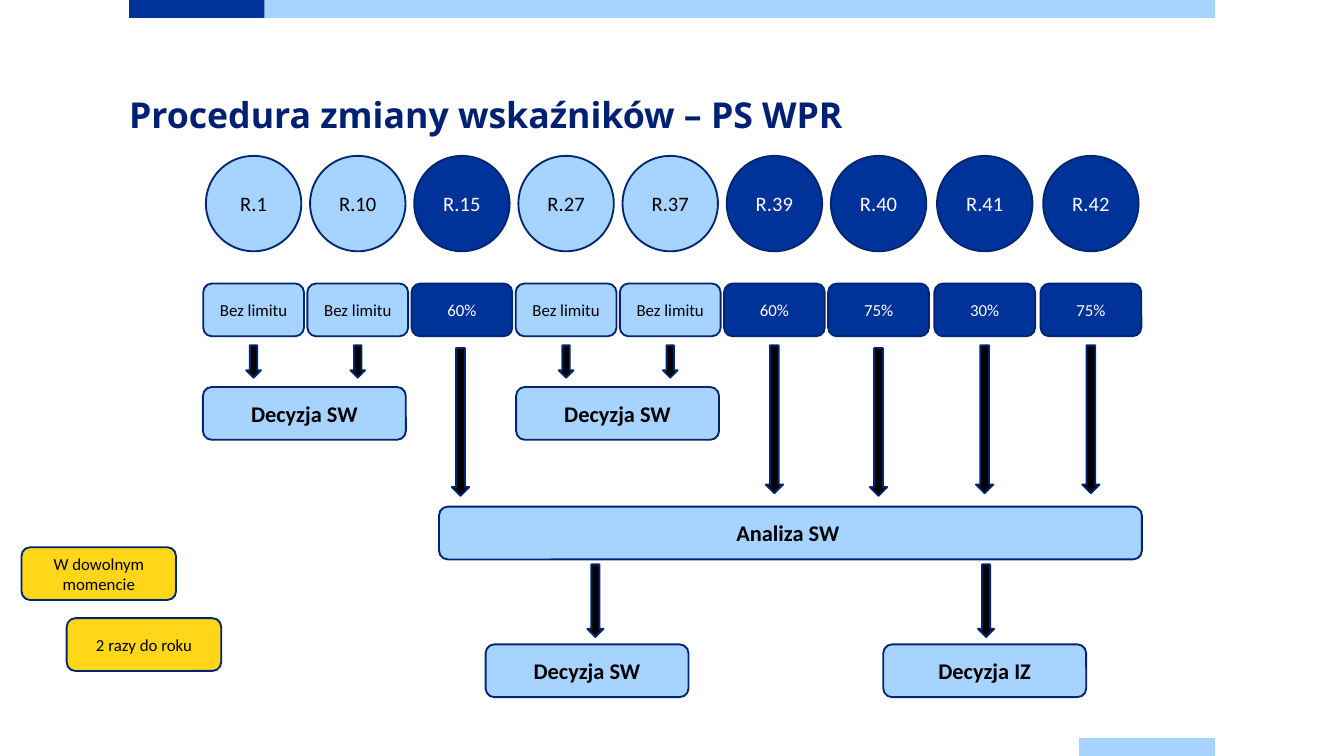
from pptx import Presentation
from pptx import util as u
from pptx.dml import color
from pptx.enum import shapes, text

LIGHT, DARK, YELLOW = "A6D3FF", "003399", "FFD618"
BLACK, WHITE, OUTLINE = "000000", "FFFFFF", "002671"
KIND = shapes.MSO_SHAPE

deck = Presentation()
deck.slide_width = u.Inches(10)
deck.slide_height = deck.slide_width * 9 // 16
page = deck.slides.add_slide(deck.slide_layouts[6])
COL = deck.slide_width / 100
ROW = deck.slide_height / 56.25


def rgb(value):
    return color.RGBColor.from_string(value)


def add_box(kind, left, top, width, height, fill, words="", size=9, bold=False, line=OUTLINE):
    box = page.shapes.add_shape(
        kind, round(left * COL), round(top * ROW), round(width * COL), round(height * ROW))
    box.shadow.inherit = False
    box.fill.solid()
    box.fill.fore_color.rgb = rgb(fill)
    if line:
        box.line.color.rgb = rgb(line)
        box.line.width = u.Pt(1)
    else:
        box.line.fill.background()
    if words:
        frame = box.text_frame
        frame.word_wrap = True
        frame.margin_left = frame.margin_right = round(0.5 * COL)
        frame.vertical_anchor = text.MSO_ANCHOR.MIDDLE
        para = frame.paragraphs[0]
        para.alignment = text.PP_ALIGN.CENTER
        span = para.add_run()
        span.text = words
        span.font.name = "Calibri"
        span.font.size = u.Pt(size)
        span.font.bold = bold
        span.font.color.rgb = rgb(WHITE if fill == DARK else BLACK)


for left, top, width, fill in [(9.6, 0, 10.1, DARK), (19.7, 0, 70.7, LIGHT), (80.3, 54.92, 10.1, LIGHT)]:
    add_box(KIND.RECTANGLE, left, top, width, 1.33, fill, line=None)

title = page.shapes.add_textbox(round(9.6 * COL), round(6.7 * ROW), round(80.8 * COL), round(8 * ROW))
frame = title.text_frame
frame.word_wrap = True
frame.margin_left = frame.margin_right = frame.margin_top = frame.margin_bottom = 0
para = frame.paragraphs[0]
para.line_spacing = u.Pt(24.5)
span = para.add_run()
span.text = "Procedura zmiany wskaźników – PS WPR"
span.font.name = "Open Sans"
span.font.size = u.Pt(19.1)
span.font.bold = True
span.font.color.rgb = rgb("002073")

indicators = [
    ("R.1", "Bez limitu"), ("R.10", "Bez limitu"), ("R.15", "60%"),
    ("R.27", "Bez limitu"), ("R.37", "Bez limitu"), ("R.39", "60%"),
    ("R.40", "75%"), ("R.41", "30%"), ("R.42", "75%"),
]
for index, (indicator, limit) in enumerate(indicators):
    center = 18.87 + 7.75 * index + 0.15 * max(0, index - 6)
    unlimited = limit == "Bez limitu"
    fill = LIGHT if unlimited else DARK
    add_box(KIND.OVAL, center - 3.55, 11.6, 7.1, 7.1, fill, indicator, 11)
    add_box(KIND.ROUNDED_RECTANGLE, center - 3.75, 21.1, 7.5, 3.93, fill, limit)
    width, height = (1.1, 2.4) if unlimited else (1.3, 11)
    top = 25.9 if indicator in ("R.15", "R.40") else 25.7
    shift = 0.1 if indicator == "R.15" else 0
    add_box(KIND.DOWN_ARROW, center - width / 2 - shift, top, width, height, BLACK)

for left, top, width, words in [
    (15.1, 28.8, 15.1, "Decyzja SW"),
    (38.4, 28.8, 15.1, "Decyzja SW"),
    (32.67, 37.7, 52.3, "Analiza SW "),
    (36.13, 47.95, 15.1, "Decyzja SW"),
    (65.72, 47.95, 15.1, "Decyzja IZ"),
]:
    add_box(KIND.ROUNDED_RECTANGLE, left, top, width, 3.93, LIGHT, words, 12, True)

for left in (43.7, 72.77):
    add_box(KIND.DOWN_ARROW, left, 42, 1.2, 5.4, BLACK)

for left, top, words in [(1.6, 40.72, "W dowolnym momencie"), (4.96, 46, "2 razy do roku")]:
    add_box(KIND.ROUNDED_RECTANGLE, left, top, 11.5, 3.93, YELLOW, words)

deck.save("out.pptx")
